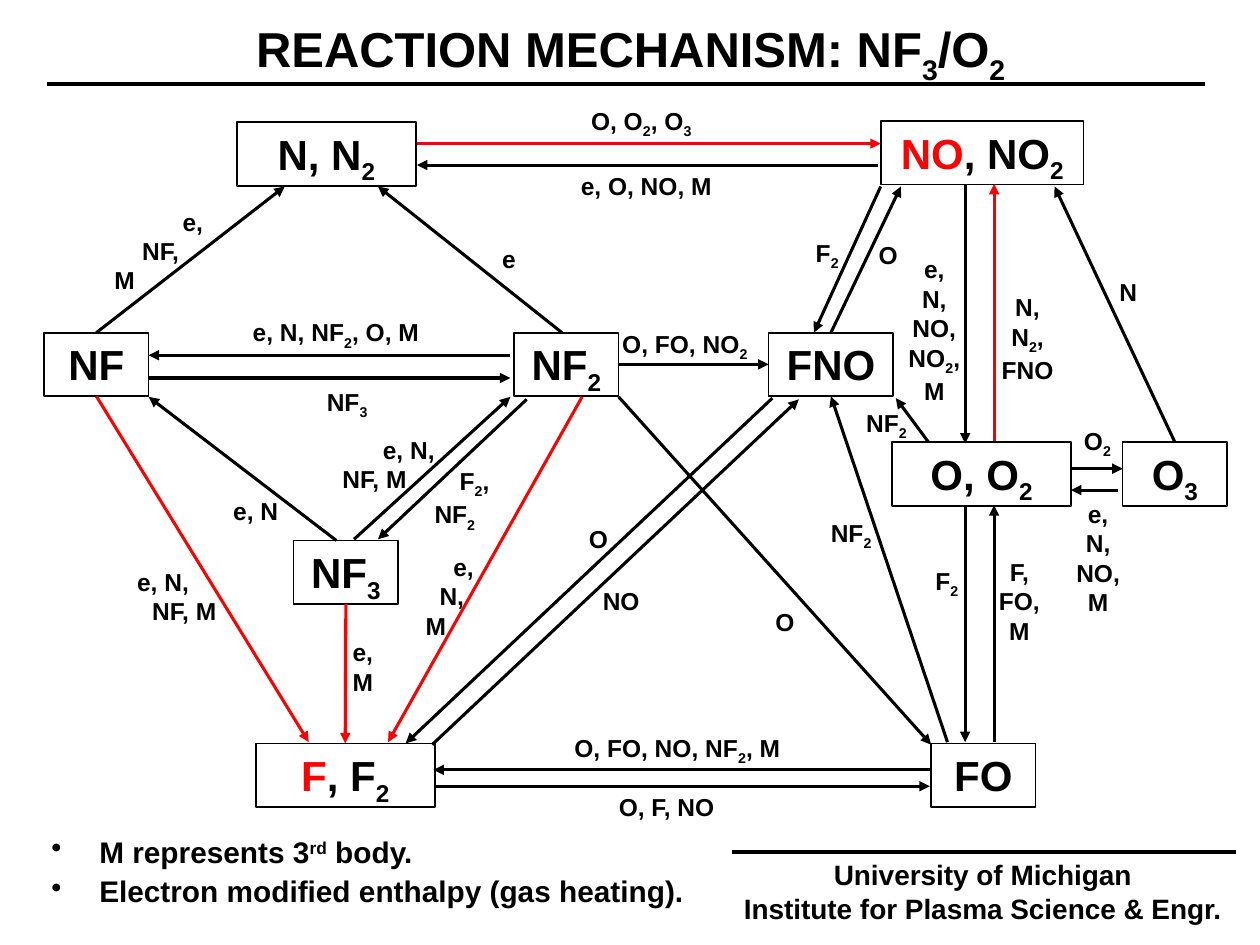
"""Builds the NF3/O2 reaction mechanism slide."""
from lxml import etree
from pptx import Presentation
from pptx.dml.color import RGBColor
from pptx.enum.shapes import MSO_CONNECTOR, MSO_SHAPE
from pptx.enum.text import MSO_ANCHOR, PP_ALIGN
from pptx.oxml.ns import qn
from pptx.util import Inches, Pt

LEFT, CENTER = PP_ALIGN.LEFT, PP_ALIGN.CENTER
TOP = MSO_ANCHOR.TOP
STRAIGHT, RECTANGLE = MSO_CONNECTOR.STRAIGHT, MSO_SHAPE.RECTANGLE
NORTH, WEST, SOUTH, EAST = range(4)
BLACK, RED = "000000", "FF0000"
BASELINES = {"_": "-25000", "^": "30000"}
color = RGBColor.from_string

prs = Presentation()
prs.slide_width, prs.slide_height = Inches(10), Inches(7.5)
COL, ROW = prs.slide_width // 100, prs.slide_height // 75
GRID = (COL, ROW, COL, ROW)
slide = prs.slides.add_slide(prs.slide_layouts[6])
shapes = slide.shapes
species = {}


def write(frame, lines, size, indents=()):
    """Fill a frame; | parts runs, a leading _ ^ ! means sub, super, red."""
    frame.word_wrap = True
    frame.vertical_anchor = TOP
    for i, line in enumerate(lines):
        paragraph = frame.paragraphs[0] if i == 0 else frame.add_paragraph()
        paragraph.alignment = LEFT if indents else CENTER
        if indents:
            paragraph._p.get_or_add_pPr().set("marL", str(round(indents[i] * COL)))
        for part in line.split("|"):
            run = paragraph.add_run()
            run.text = part.lstrip("_^!")
            run.font.name, run.font.size, run.font.bold = "Arial", Pt(size), True
            run.font.color.rgb = color(RED if part[0] == "!" else BLACK)
            if part[0] in BASELINES:
                run._r.get_or_add_rPr().set("baseline", BASELINES[part[0]])


def draw_line(start, end, hue=BLACK, weight=1.75, arrow=True):
    """Draw a line between grid points or (species, side) pairs."""
    joined = [isinstance(point[0], str) for point in (start, end)]
    ends = [(0, 0) if glued else point for glued, point in zip(joined, (start, end))]
    box = [round(v * unit) for v, unit in zip((*ends[0], *ends[1]), GRID)]
    line = shapes.add_connector(STRAIGHT, *box)
    if joined[0]:
        line.begin_connect(species[start[0]], start[1])
    if joined[1]:
        line.end_connect(species[end[0]], end[1])
    line.line.color.rgb = color(hue)
    line.line.width = Pt(weight)
    properties = line._element.spPr
    if arrow:
        etree.SubElement(properties.find(qn("a:ln")), qn("a:tailEnd"), type="triangle")
    etree.SubElement(properties, qn("a:effectLst"))


NARROW, WIDE, TALL = 8.3, 14.2, 5.05
for formula, left, top, width in (
    ("N, N|_2", 18.8, 9.7, WIDE),
    ("!NO|, NO|_2", 69.9, 9.6, 16.1),
    ("NF", 3.5, 26.4, NARROW),
    ("NF|_2", 40.8, 26.4, NARROW),
    ("FNO", 61, 26.4, 9.9),
    ("O, O|_2", 70.8, 35.1, WIDE),
    ("O|_3", 89.1, 35.1, NARROW),
    ("NF|_3", 23.3, 42.9, NARROW),
    ("!F|, F|_2", 20.3, 59, WIDE),
    ("FO", 73.9, 59, NARROW),
):
    node = shapes.add_shape(
        RECTANGLE, *(round(v * unit) for v, unit in zip((left, top, width, TALL), GRID)))
    node.shadow.inherit = False
    node.fill.background()
    node.line.color.rgb = color(BLACK)
    node.line.width = Pt(1)
    write(node.text_frame, [formula], 24)
    species[formula] = node

for start, end in (
    ((69.7, 13.1), (33.1, 13.1)),
    (("NF", NORTH), (22.6, 14.8)),
    ((26.7, 42.9), (11.8, 31.5)),
    ((28.1, 42.8), (40.5, 31.5)),
    ((44.6, 26.4), (30, 14.8)),
    ((41.8, 31.7), (30, 42.8)),
    ((11.8, 30), (40.5, 30)),
    ((40.5, 28.2), (11.8, 28.2)),
    ((73.8, 61.1), (34.4, 61.1)),
    ((34.5, 62.4), (73.8, 62.4)),
    ((49.1, 31.5), (73.9, 59.1)),
    ((76.6, 40.2), (76.6, 58.9)),
    ((78.9, 58.9), (78.9, 40.1)),
    ((76.6, 14.7), (76.6, 35.2)),
    (("NF|_2", EAST), ("FNO", WEST)),
    (("FNO", NORTH), (71.5, 14.8)),
    ((69.9, 14.8), (64.6, 26.4)),
    ((75.2, 58.9), ("FNO", SOUTH)),
    ((73.7, 35.1), (71.1, 31.6)),
    ((61.3, 31.6), (32.2, 59)),
    ((34.3, 59.1), (63.4, 31.7)),
    ((85, 37.2), (89.1, 37.2)),
    ((88.7, 38.9), (85, 38.9)),
    (("O|_3", NORTH), (83.7, 14.8)),
):
    draw_line(start, end)

for start, end in (
    ((33.1, 11.4), (69.9, 11.4)),
    (("NF", SOUTH), (24.5, 58.9)),
    (("NF|_3", SOUTH), ("!F|, F|_2", NORTH)),
    ((46.2, 31.5), (30.8, 58.9)),
    ((78.9, 35), (78.9, 14.6)),
):
    draw_line(start, end, RED)

draw_line((3.7, 6.7), (95.6, 6.7), weight=2.25, arrow=False)
draw_line((58.1, 67.6), (98.1, 67.6), weight=2.25, arrow=False)

for box, size, lines, *indents in (
    ((0.1, 1, 99.9, 5.7), 28, ["REACTION MECHANISM: NF|_3|/O|_2"]),
    ((57.4, 67.6, 41.2, 6.4), 16,
     ["University of Michigan", "Institute for Plasma Science & Engr."]),
    ((40.4, 7.9, 21, 3.4), 14, ["O, O|_2|, O|_3"]),
    ((40.8, 13.1, 21, 3.4), 14, ["e, O, NO, M"]),
    ((78, 22.7, 7.1, 8.1), 14, ["N,", "N|_2|,", "FNO"]),
    ((70.7, 19.7, 6.9, 14.4), 14, ["e,", "N,", "NO,", "NO|_2|,", "M"]),
    ((78, 43.7, 5.8, 8.1), 14, ["F,", "FO,", "M"]),
    ((72.9, 44.4, 4.5, 3.4), 14, ["F|_2"]),
    ((59.4, 47.7, 5.8, 3.4), 14, ["O"]),
    ((43, 57.7, 21.5, 3.4), 14, ["O, FO, NO, NF|_2|, M"]),
    ((44.8, 62.4, 16.2, 3.4), 14, ["O, F, NO"]),
    ((8.1, 15.9, 9.1, 8.1), 14, ["e,", "NF,", "M"], 5.4, 2.2, 0),
    ((36.2, 18.9, 8.4, 3.4), 14, ["e"]),
    ((9.3, 44.5, 9.5, 5.7), 14, ["e, N,", "NF, M"], 0.6, 1.8),
    ((31.2, 43.3, 8.4, 8.1), 14, ["e,", "N,", "M"], 3.8, 2.7, 1.6),
    ((24.6, 50.1, 8.4, 7.3), 14, ["e,", "M"]),
    ((16.1, 38.9, 8.4, 3.4), 14, ["e, N"]),
    ((26.2, 34, 10, 5.7), 14, ["e, N,", "NF, M"], 3.2, 0),
    ((30.8, 36.5, 10.5, 5.7), 14, ["F|_2|,", "NF|_2"], 4.7, 2.7),
    ((17.2, 24.7, 18.9, 3.4), 14, ["e, N, NF|_2|, O, M"]),
    ((20, 30.2, 15.1, 3.4), 14, ["NF|_3"]),
    ((46.6, 25.6, 15.5, 3.4), 14, ["O, FO, NO|_2"]),
    ((67.6, 18.6, 5.8, 3.4), 14, ["O"]),
    ((63.4, 18.4, 4.5, 3.4), 14, ["F|_2"]),
    ((64.5, 40.6, 6.1, 3.4), 14, ["NF|_2"]),
    ((67.3, 31.9, 6.1, 3.4), 14, ["NF|_2"]),
    ((44.6, 41.1, 5.8, 3.4), 14, ["O"]),
    ((46.4, 46, 5.8, 3.4), 14, ["NO"]),
    ((84.4, 33.3, 5.4, 3.4), 14, ["O|_2"]),
    ((83.7, 39.1, 6.9, 12), 14, ["e,", "N,", "NO,", "M"]),
    ((86, 21.5, 7.1, 3.4), 14, ["N"]),
):
    label = shapes.add_textbox(*(round(v * unit) for v, unit in zip(box, GRID)))
    write(label.text_frame, lines, size, indents)

remarks = shapes.add_textbox(
    *(round(v * unit) for v, unit in zip((3.1, 65.4, 59.7, 9), GRID))).text_frame
write(remarks, ["M represents 3|^rd| body.", "Electron modified enthalpy (gas heating)."],
      17, (3.8, 3.8))
for remark in remarks.paragraphs:
    remark.line_spacing = 1.1
    bullet = remark._p.get_or_add_pPr()
    bullet.set("indent", str(round(-3.8 * COL)))
    etree.SubElement(bullet, qn("a:buChar"), char="•")

prs.save("out.pptx")
